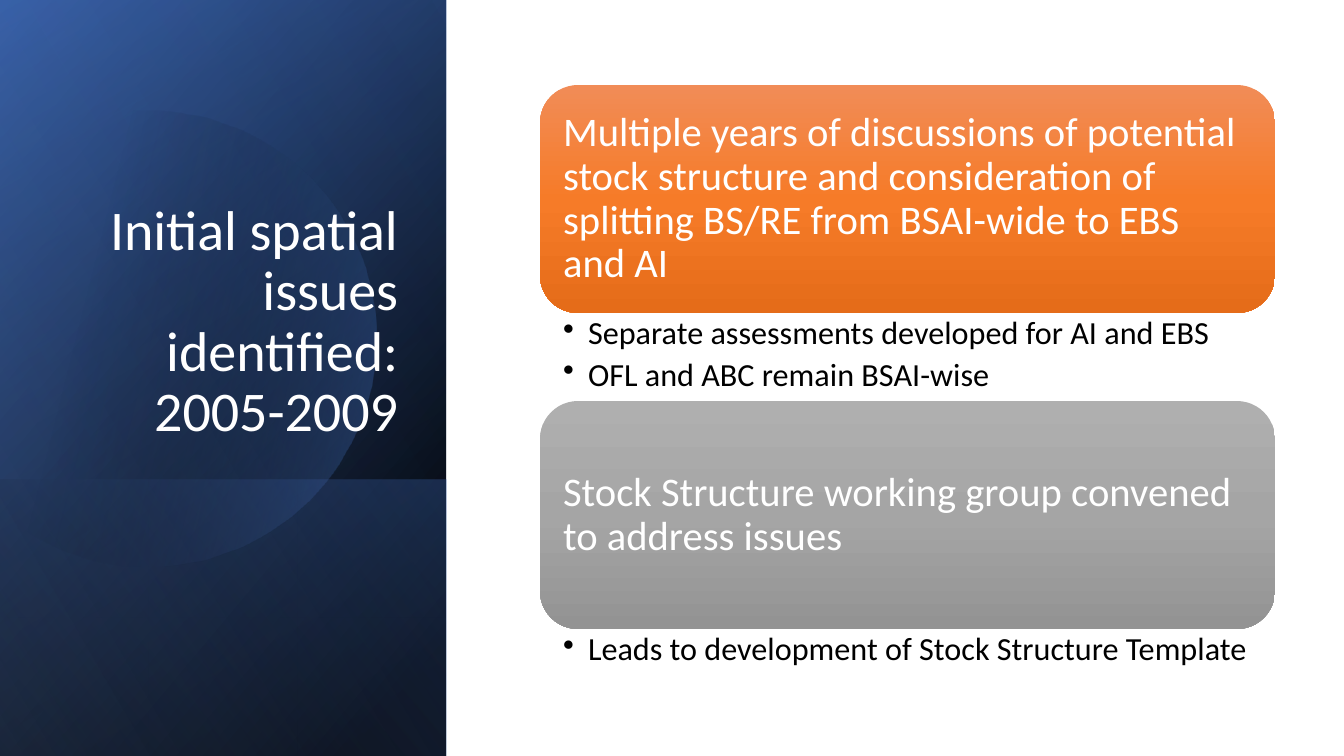
import math

from lxml import etree
from pptx import Presentation
from pptx import util as u
from pptx.dml.color import RGBColor
from pptx.enum import shapes, text
from pptx.oxml import ns

# Content
TITLE = "Initial spatial issues identified: 2005-2009"
CARDS = [
    {
        "heading": "Multiple years of discussions of potential stock structure and "
                   "consideration of splitting BS/RE from BSAI-wide to EBS and AI",
        "bullets": ["Separate assessments developed for AI and EBS",
                    "OFL and ABC remain BSAI-wise"],
        "fill": "orange",
        "bullets_height": 88,
    },
    {
        "heading": "Stock Structure working group convened to address issues",
        "bullets": ["Leads to development of Stock Structure Template"],
        "fill": "gray",
        "bullets_height": 53,
    },
]

# Gradients: angle in degrees, then stops of (position %, colour, opacity %)
THEME = {
    "font": "Calibri",
    "light": "FFFFFF",
    "dark": "000000",
    "title_size": 40,
    "heading_size": 29,
    "bullet_size": 23,
    "bullet_gap": 4.6,
    "line_spacing": 0.9,
    "base": (50, [(8, "000000", 100), (100, "2F5597", 100)]),
    "tint": (30, [(0, "000000", 0), (99, "4472C4", 46)]),
    "foot": (130, [(2, "4472C4", 29), (100, "000000", 30)]),
    "disc": (14, [(29, "000000", 0), (100, "4472C4", 43)]),
    "sheen": (120, [(0, "000000", 0), (99, "8FAADC", 11)]),
    "orange": (90, [(0, "F18C57", 100), (50, "F67B28", 100), (100, "E56C19", 100)]),
    "gray": (90, [(0, "AFAFAF", 100), (50, "A5A5A5", 100), (100, "939393", 100)]),
}

# Layout in px
SCALE = 914400 / 100.8
SLIDE_W, SLIDE_H = 1344, 756
PANEL_W = 446
FOOT_H = 276
DISC_X, DISC_Y, DISC_R, DISC_CUT = 148, 339, 228, -15
TITLE_BOX = (65, 185, 343, 264)
CARD_X, CARD_TOP, CARD_W, CARD_H = 540, 85, 735, 228
CARD_INSET = 12
BULLET_INSET, BULLET_INSET_Y, BULLET_INDENT = 23, 4, 25


def px(length):
    return u.Emu(round(length * SCALE))


def add_xml(parent, tag, **attributes):
    return etree.SubElement(parent, ns.qn(tag), attributes)


def paint(shape, gradient):
    """Give a shape a linear gradient, no outline and no shadow."""
    angle, stops = gradient
    shape.shadow.inherit = False
    shape.line.fill.background()
    shape.fill.background()
    properties = shape._element.spPr
    fill = etree.Element(ns.qn("a:gradFill"), rotWithShape="1")
    stop_list = add_xml(fill, "a:gsLst")
    for position, color, opacity in stops:
        stop = add_xml(stop_list, "a:gs", pos=str(position * 1000))
        tone = add_xml(stop, "a:srgbClr", val=color)
        if opacity < 100:
            add_xml(tone, "a:alpha", val=str(opacity * 1000))
    add_xml(fill, "a:lin", ang=str(angle * 60000), scaled="0")
    properties.replace(properties.find(ns.qn("a:noFill")), fill)


def add_panel_layer(page, top, height, gradient):
    """Add a sidebar layer: a rectangle turned by 90 degrees and mirrored."""
    left = (PANEL_W - height) / 2
    upper = top + (height - PANEL_W) / 2
    layer = page.shapes.add_shape(shapes.MSO_SHAPE.RECTANGLE,
                                  px(left), px(upper), px(height), px(PANEL_W))
    layer.rotation = 90
    layer._element.spPr.find(ns.qn("a:xfrm")).set("flipH", "1")
    paint(layer, gradient)


def add_disc(page):
    """Add the circle whose left side is cut by a vertical line."""
    limit = math.acos((DISC_CUT - DISC_X) / DISC_R)
    steps = 90
    angles = [limit * (2 * step / steps - 1) for step in range(steps + 1)]
    points = [(DISC_X + DISC_R * math.cos(angle), DISC_Y + DISC_R * math.sin(angle))
              for angle in angles]
    builder = page.shapes.build_freeform(*points[0], scale=SCALE)
    builder.add_line_segments(points[1:], close=True)
    paint(builder.convert_to_shape(), THEME["disc"])


def write(shape, lines, size, color, frame_format, para_format):
    frame = shape.text_frame
    frame.word_wrap = True
    for name, value in frame_format.items():
        setattr(frame, name, value)
    for index, line in enumerate(lines):
        para = frame.paragraphs[0] if index == 0 else frame.add_paragraph()
        para.line_spacing = THEME["line_spacing"]
        for name, value in para_format.items():
            setattr(para, name, value)
        span = para.add_run()
        span.text = line
        span.font.name = THEME["font"]
        span.font.size = u.Pt(size)
        span.font.color.rgb = RGBColor.from_string(color)


def add_bullets(shape):
    for para in shape.text_frame.paragraphs:
        properties = para._p.get_or_add_pPr()
        properties.set("marL", str(px(BULLET_INDENT)))
        properties.set("indent", str(-px(BULLET_INDENT)))
        add_xml(properties, "a:buChar", char="•")


def add_card(page, top, card):
    box = page.shapes.add_shape(shapes.MSO_SHAPE.ROUNDED_RECTANGLE,
                                px(CARD_X), px(top), px(CARD_W), px(CARD_H))
    paint(box, THEME[card["fill"]])
    sides = ("margin_left", "margin_top", "margin_right", "margin_bottom")
    write(box, [card["heading"]], THEME["heading_size"], THEME["light"],
          {"vertical_anchor": text.MSO_ANCHOR.MIDDLE,
           **{side: px(CARD_INSET) for side in sides}},
          {"alignment": text.PP_ALIGN.LEFT})

    notes = page.shapes.add_textbox(px(CARD_X), px(top + CARD_H),
                                    px(CARD_W), px(card["bullets_height"]))
    write(notes, card["bullets"], THEME["bullet_size"], THEME["dark"],
          {"margin_left": px(BULLET_INSET), "margin_right": px(BULLET_INSET),
           "margin_top": px(BULLET_INSET_Y), "margin_bottom": px(BULLET_INSET_Y)},
          {"level": 1, "space_after": u.Pt(THEME["bullet_gap"])})
    add_bullets(notes)


def main():
    deck = Presentation()
    deck.slide_width, deck.slide_height = px(SLIDE_W), px(SLIDE_H)
    page = deck.slides.add_slide(deck.slide_layouts[6])

    # Sidebar
    add_panel_layer(page, 0, SLIDE_H, THEME["base"])
    add_panel_layer(page, 0, SLIDE_H, THEME["tint"])
    add_panel_layer(page, SLIDE_H - FOOT_H, FOOT_H, THEME["foot"])
    add_disc(page)
    add_panel_layer(page, 0, SLIDE_H, THEME["sheen"])

    # Title
    title = page.shapes.add_textbox(*map(px, TITLE_BOX))
    write(title, [TITLE], THEME["title_size"], THEME["light"],
          {"vertical_anchor": text.MSO_ANCHOR.BOTTOM},
          {"alignment": text.PP_ALIGN.RIGHT})

    # Cards, each followed by its bullets
    top = CARD_TOP
    for card in CARDS:
        add_card(page, top, card)
        top += CARD_H + card["bullets_height"]

    deck.save("out.pptx")


if __name__ == "__main__":
    main()
